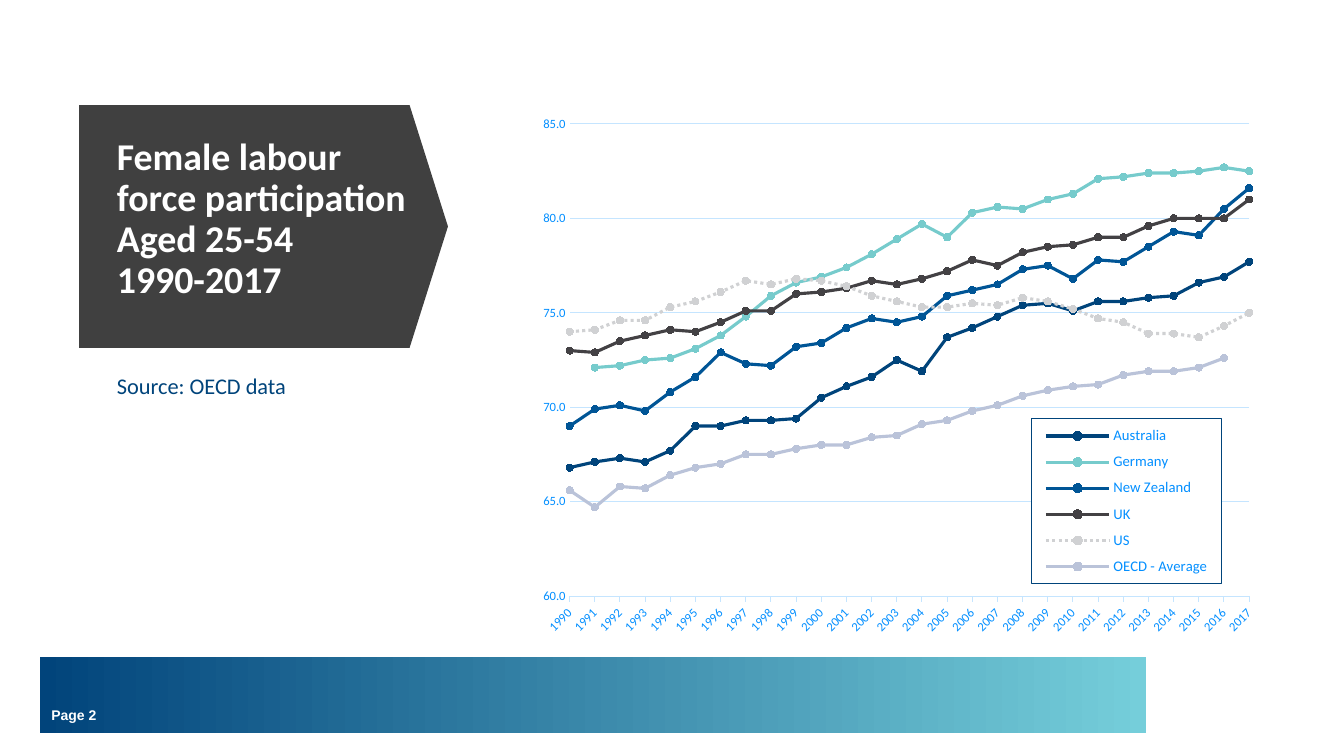
from lxml import etree
from pptx import Presentation
from pptx.chart.data import CategoryChartData
from pptx.dml.color import RGBColor
from pptx.enum.chart import XL_CHART_TYPE, XL_LEGEND_POSITION, XL_MARKER_STYLE, XL_TICK_MARK
from pptx.enum.dml import MSO_LINE
from pptx.enum.shapes import MSO_SHAPE
from pptx.enum.text import MSO_ANCHOR, MSO_AUTO_SIZE, PP_ALIGN
from pptx.oxml import parse_xml
from pptx.oxml.ns import nsdecls, qn
from pptx.util import Pt

NAVY, SKY, PALE = "00447B", "038FFF", "C5E5FF"


def style(font, size, color, name="Calibri", bold=False):
    font.size, font.name, font.bold = Pt(size), name, bold
    font.color.rgb = RGBColor.from_string(color)


def place(element, index, x, y, w, h, target=""):
    """Give a chart part a manual layout in fractions of the chart."""
    for old in element.findall(qn("c:layout")):
        element.remove(old)
    element.insert(index, parse_xml(
        f'<c:layout {nsdecls("c")}><c:manualLayout>{target}'
        '<c:xMode val="edge"/><c:yMode val="edge"/>'
        f'<c:x val="{x}"/><c:y val="{y}"/><c:w val="{w}"/><c:h val="{h}"/>'
        '</c:manualLayout></c:layout>'))


prs = Presentation()
prs.slide_width, prs.slide_height = Pt(960), Pt(540)
slide = prs.slides.add_slide(prs.slide_layouts[1])
shapes = slide.shapes

# Footer band and page number
band = shapes.add_shape(MSO_SHAPE.RECTANGLE, Pt(28.4), Pt(469.4), Pt(790.5), Pt(54.5))
band.shadow.inherit = False
band.fill.gradient()
band.fill.gradient_angle = 0
for stop, color in zip(band.fill.gradient_stops, ("01447B", "75CEDA")):
    stop.color.rgb = RGBColor.from_string(color)
band.line.fill.background()

page = shapes.add_textbox(Pt(36.7), Pt(502), Pt(66), Pt(18)).text_frame
page.margin_left = page.margin_right = page.margin_top = page.margin_bottom = 0
page.vertical_anchor = MSO_ANCHOR.MIDDLE
page.word_wrap = True
page.text = "Page 2"
style(page.paragraphs[0].font, 10, "FFFFFF", "Arial", True)

# Heading on a dark pointer
pointer = shapes.add_shape(MSO_SHAPE.PENTAGON, Pt(56.5), Pt(75), Pt(263.5), Pt(173.5))
pointer.adjustments[0] = 0.158
pointer.shadow.inherit = False
pointer.fill.solid()
pointer.fill.fore_color.rgb = RGBColor.from_string("404040")
pointer.line.fill.background()

heading, source = shapes.title, slide.placeholders[1]
heading._element.addprevious(pointer._element)
heading.left, heading.top, heading.width, heading.height = Pt(76.3), Pt(95), Pt(230.4), Pt(140.4)
source.left, source.top, source.width, source.height = Pt(76.3), Pt(264.2), Pt(210.2), Pt(190.8)
heading.text_frame.text = "Female labour force participation\vAged 25-54\v1990-2017"
source.text_frame.text = "Source: OECD data"
for holder, size, color, bold in ((heading, 27, "FFFFFF", True), (source, 16, NAVY, False)):
    frame = holder.text_frame
    frame.auto_size = MSO_AUTO_SIZE.NONE
    frame.vertical_anchor = MSO_ANCHOR.TOP
    paragraph = frame.paragraphs[0]
    paragraph.alignment = PP_ALIGN.LEFT
    paragraph.line_spacing = 0.9
    paragraph.space_before = Pt(0)
    properties = paragraph._p.get_or_add_pPr()
    properties.set("marL", "0")
    properties.set("indent", "0")
    etree.SubElement(properties, qn("a:buNone"))
    style(paragraph.font, size, color, bold=bold)

# Participation rates, 1990 to 2017
rates = [
    ("Australia", NAVY, [
        66.8, 67.1, 67.3, 67.1, 67.7, 69, 69, 69.3, 69.3, 69.4, 70.5, 71.1, 71.6, 72.5,
        71.9, 73.7, 74.2, 74.8, 75.4, 75.5, 75.1, 75.6, 75.6, 75.8, 75.9, 76.6, 76.9, 77.7]),
    ("Germany", "76CBCC", [
        None, 72.1, 72.2, 72.5, 72.6, 73.1, 73.8, 74.8, 75.9, 76.6, 76.9, 77.4, 78.1, 78.9,
        79.7, 79, 80.3, 80.6, 80.5, 81, 81.3, 82.1, 82.2, 82.4, 82.4, 82.5, 82.7, 82.5]),
    ("New Zealand", "005596", [
        69, 69.9, 70.1, 69.8, 70.8, 71.6, 72.9, 72.3, 72.2, 73.2, 73.4, 74.2, 74.7, 74.5,
        74.8, 75.9, 76.2, 76.5, 77.3, 77.5, 76.8, 77.8, 77.7, 78.5, 79.3, 79.1, 80.5, 81.6]),
    ("UK", "434144", [
        73, 72.9, 73.5, 73.8, 74.1, 74, 74.5, 75.1, 75.1, 76, 76.1, 76.3, 76.7, 76.5,
        76.8, 77.2, 77.8, 77.5, 78.2, 78.5, 78.6, 79, 79, 79.6, 80, 80, 80, 81]),
    ("US", "D0D1D3", [
        74, 74.1, 74.6, 74.6, 75.3, 75.6, 76.1, 76.7, 76.5, 76.8, 76.7, 76.4, 75.9, 75.6,
        75.3, 75.3, 75.5, 75.4, 75.8, 75.6, 75.2, 74.7, 74.5, 73.9, 73.9, 73.7, 74.3, 75]),
    ("OECD - Average", "BAC3D9", [
        65.6, 64.7, 65.8, 65.7, 66.4, 66.8, 67, 67.5, 67.5, 67.8, 68, 68, 68.4, 68.5,
        69.1, 69.3, 69.8, 70.1, 70.6, 70.9, 71.1, 71.2, 71.7, 71.9, 71.9, 72.1, 72.6, None]),
]
data = CategoryChartData(number_format="0.0")
data.categories = [str(year) for year in range(1990, 2018)]
for country, color, values in rates:
    data.add_series(country, values)
chart = shapes.add_chart(XL_CHART_TYPE.LINE_MARKERS, Pt(367.2), Pt(74.9),
                         Pt(543.6), Pt(380.2), data).chart
chart.has_title = False
style(chart.font, 10, NAVY)
plot = chart.plots[0]
plot.vary_by_categories = False
place(plot._element.getparent(), 0, 0.073, 0.036, 0.893, 0.887,
      '<c:layoutTarget val="inner"/>')

for series, (country, color, values) in zip(plot.series, rates):
    rgb = RGBColor.from_string(color)
    series.smooth = False
    series.format.line.color.rgb = rgb
    series.format.line.width = Pt(2.25)
    if country == "US":
        series.format.line.dash_style = MSO_LINE.ROUND_DOT
    marker = series.marker
    marker.style, marker.size = XL_MARKER_STYLE.CIRCLE, 5
    marker.format.fill.solid()
    marker.format.fill.fore_color.rgb = rgb
    marker.format.line.color.rgb = rgb

years, percent = chart.category_axis, chart.value_axis
percent.minimum_scale, percent.maximum_scale = 60, 85
for old in percent._element.findall(qn("c:crossBetween")):
    percent._element.remove(old)
percent._element.find(qn("c:crosses")).addnext(
    parse_xml(f'<c:crossBetween {nsdecls("c")} val="midCat"/>'))
percent.major_unit = 5
percent.major_tick_mark = XL_TICK_MARK.NONE
percent.tick_labels.number_format = "#,##0.0"
percent.tick_labels.number_format_is_linked = False
percent.format.line.fill.background()
percent.has_major_gridlines = True
years.has_major_gridlines = False
years.major_tick_mark = XL_TICK_MARK.OUTSIDE
for line in (percent.major_gridlines.format.line, years.format.line):
    line.color.rgb = RGBColor.from_string(PALE)
    line.width = Pt(0.75)
for axis in (years, percent):
    style(axis.tick_labels.font, 9, SKY)
years._element.find(qn("c:txPr")).find(qn("a:bodyPr")).set("rot", "-2700000")

chart.has_legend = True
legend = chart.legend
legend.position = XL_LEGEND_POSITION.RIGHT
legend.include_in_layout = False
place(legend._element, 1, 0.68, 0.59, 0.25, 0.31)
legend._element.find(qn("c:overlay")).addnext(parse_xml(
    f'<c:spPr {nsdecls("c", "a")}><a:solidFill><a:srgbClr val="FFFFFF"/></a:solidFill>'
    f'<a:ln w="9525"><a:solidFill><a:srgbClr val="{NAVY}"/></a:solidFill></a:ln></c:spPr>'))
style(legend.font, 10.5, SKY)

prs.save("out.pptx")
